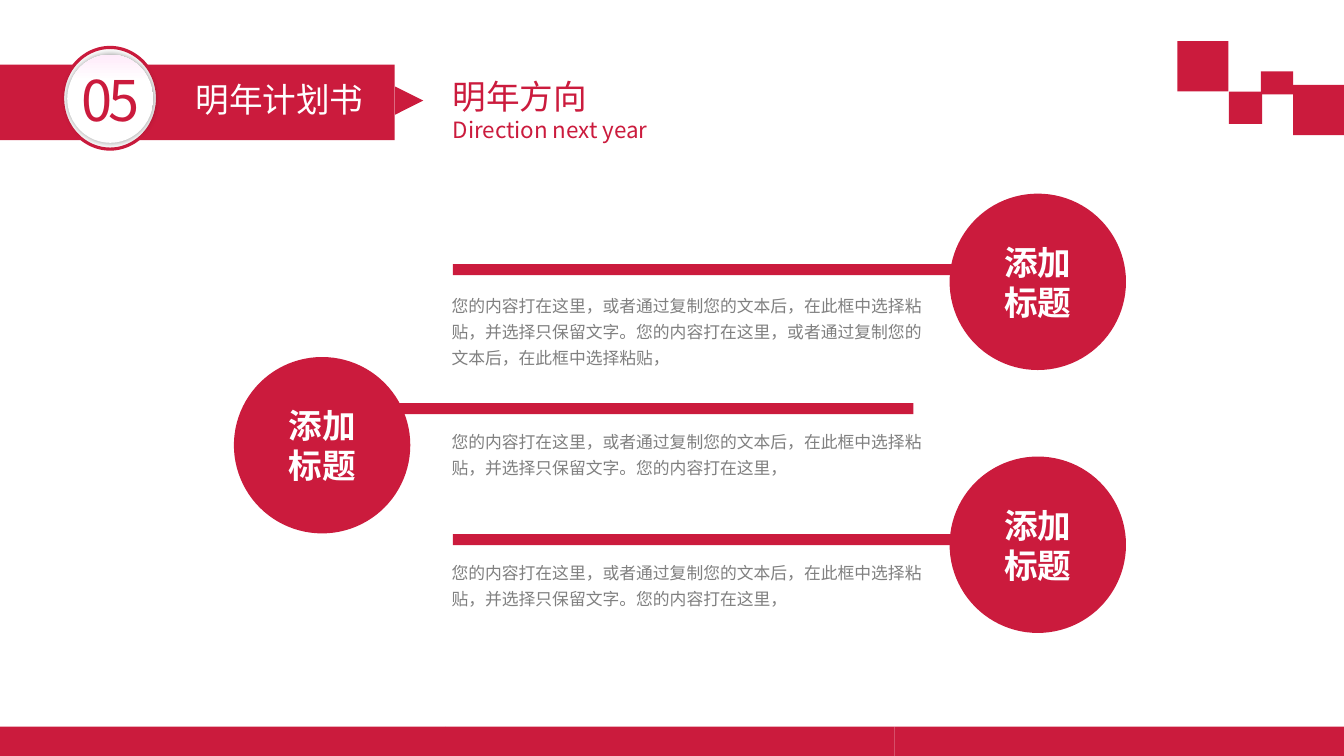
from lxml import etree
from pptx import Presentation
from pptx.dml.color import RGBColor
from pptx.enum.shapes import MSO_SHAPE
from pptx.enum.text import MSO_ANCHOR, MSO_AUTO_SIZE, PP_ALIGN
from pptx.oxml.ns import qn
from pptx.util import Inches, Pt

RECTANGLE = MSO_SHAPE.RECTANGLE
OVAL = MSO_SHAPE.OVAL
TRIANGLE = MSO_SHAPE.ISOSCELES_TRIANGLE
TOP, MIDDLE = MSO_ANCHOR.TOP, MSO_ANCHOR.MIDDLE
LEFT, CENTER = PP_ALIGN.LEFT, PP_ALIGN.CENTER
NO_FIT = MSO_AUTO_SIZE.NONE

WIDTH, HEIGHT = Inches(13.33), Inches(7.5)
COLUMNS, ROWS = 32, 18
FONT = "Noto Sans CJK SC"
RED, WHITE, GREY, PINK = "CB1B3D", "FFFFFF", "808080", "FFEBFA"
WIDE_INSETS, SLIM_INSETS = (0.1, 0.05), (0.08, 0.04)

SHORT_TEXT = "您的内容打在这里，或者通过复制您的文本后，在此框中选择粘贴，并选择只保留文字。您的内容打在这里，"
LONG_TEXT = SHORT_TEXT + "或者通过复制您的文本后，在此框中选择粘贴，"
TOPICS = [
    {"bar": (10.78, 6.29), "circle": (22.61, 4.61), "text_row": 6.79, "text": LONG_TEXT},
    {"bar": (9.05, 9.6), "circle": (5.57, 8.5), "text_row": 10.03, "text": SHORT_TEXT},
    {"bar": (10.78, 12.72), "circle": (22.61, 10.87), "text_row": 13.15, "text": SHORT_TEXT},
]
CORNER_SQUARES = [
    (30.79, 2.02, 1.21, 1.2),
    (28.03, 0.98, 1.22, 1.2),
    (29.26, 2.18, 0.79, 0.77),
    (30.02, 1.7, 0.77, 0.55),
]
FOOTER_WIDTH = 10.7


def color(value):
    """Turn a hex string into a colour."""
    return RGBColor.from_string(value)


def place(column, row, columns, rows):
    """Turn grid cells into left, top, width and height."""
    across, down = WIDTH / COLUMNS, HEIGHT / ROWS
    return int(column * across), int(row * down), int(columns * across), int(rows * down)


def write(box, lines, sizes, fill=RED, bold=False, align=LEFT, anchor=TOP,
          insets=WIDE_INSETS, line_spacing=1.0, tracking=0, wrap=True):
    """Fill a shape with one formatted paragraph per line."""
    frame = box.text_frame
    frame.word_wrap = wrap
    frame.auto_size = NO_FIT
    frame.vertical_anchor = anchor
    frame.margin_left = frame.margin_right = Inches(insets[0])
    frame.margin_top = frame.margin_bottom = Inches(insets[1])
    for index, (line, size) in enumerate(zip(lines, sizes)):
        para = frame.add_paragraph() if index else frame.paragraphs[0]
        para.alignment = align
        para.line_spacing = line_spacing
        span = para.add_run()
        span.text = line
        span.font.size = Pt(size)
        span.font.bold = bold
        span.font.color.rgb = color(fill)
        span.font.name = FONT
        properties = span.font._element
        etree.SubElement(properties, qn("a:ea"), typeface=FONT)
        if tracking:
            properties.set("spc", str(tracking * 100))


def add_figure(page, kind, cells, fill=RED, outline=None):
    """Add a flat filled shape on the grid."""
    figure = page.shapes.add_shape(kind, *place(*cells))
    figure.shadow.inherit = False
    figure.fill.solid()
    figure.fill.fore_color.rgb = color(fill)
    if outline:
        figure.line.color.rgb = color(outline)
        figure.line.width = Pt(2.25)
    else:
        figure.line.fill.background()
    return figure


def add_text(page, cells, text, size, **style):
    """Add a text box on the grid."""
    write(page.shapes.add_textbox(*place(*cells)), [text], [size], **style)


def add_soft_shadow(figure):
    """Give a shape a blurred shadow with no offset."""
    effects = figure._element.spPr.find(qn("a:effectLst"))
    shadow = etree.SubElement(effects, qn("a:outerShdw"), blurRad=str(Pt(5)), dist="0", dir="0")
    tint = etree.SubElement(shadow, qn("a:srgbClr"), val="000000")
    etree.SubElement(tint, qn("a:alpha"), val="40000")


def add_topic(page, bar, circle, text_row, text):
    """Add a bar with its titled circle and its text."""
    add_figure(page, RECTANGLE, (*bar, 12.7, 0.26))
    disc = add_figure(page, OVAL, (*circle, 4.2, 4.2))
    write(disc, ["添加", "标题"], [24, 24], fill=WHITE, bold=True, align=CENTER,
          anchor=MIDDLE, insets=SLIM_INSETS)
    add_text(page, (10.56, text_row, 11.98, 2.09), text, 12, fill=GREY,
             insets=SLIM_INSETS, line_spacing=1.3)


def add_badge(page):
    """Add the round section number."""
    add_figure(page, OVAL, (1.49, 1.13, 2.26, 2.42), fill=WHITE, outline=RED)
    face = add_figure(page, OVAL, (1.6, 1.3, 2.05, 2.1))
    face.fill.gradient()
    face.fill.gradient_angle = 90
    for stop, position, tint in zip(face.fill.gradient_stops, (0.7, 1), (WHITE, PINK)):
        stop.position = position
        stop.color.rgb = color(tint)
    add_soft_shadow(face)
    add_text(page, (1.7, 1.44, 2.33, 1.85), "05", 40, tracking=-3, wrap=False)


def add_header(page):
    """Add the banner, the badge and the slide title."""
    add_figure(page, RECTANGLE, (0, 1.54, 9.4, 1.8))
    pointer = add_figure(page, TRIANGLE, (9.41, 2.06, 0.67, 0.67))
    pointer.rotation = 90
    add_badge(page)
    add_text(page, (4.42, 1.75, 4.99, 1.2), "明年计划书", 24, fill=WHITE, wrap=False)
    title = page.shapes.title
    title.left, title.top, title.width, title.height = place(10.54, 1.68, 7.06, 1.85)
    write(title, ["明年方向", "Direction next year"], [24, 16])


def main():
    """Build and save the slide."""
    deck = Presentation()
    deck.slide_width, deck.slide_height = WIDTH, HEIGHT
    page = deck.slides.add_slide(deck.slide_layouts.get_by_name("Title Only"))
    for topic in TOPICS:
        add_topic(page, **topic)
    add_header(page)
    for square in CORNER_SQUARES:
        add_figure(page, RECTANGLE, square)
    for index in range(3):
        column = COLUMNS - (3 - index) * FOOTER_WIDTH
        add_figure(page, RECTANGLE, (column, 17.3, FOOTER_WIDTH, 0.7))
    deck.save("out.pptx")


if __name__ == "__main__":
    main()
